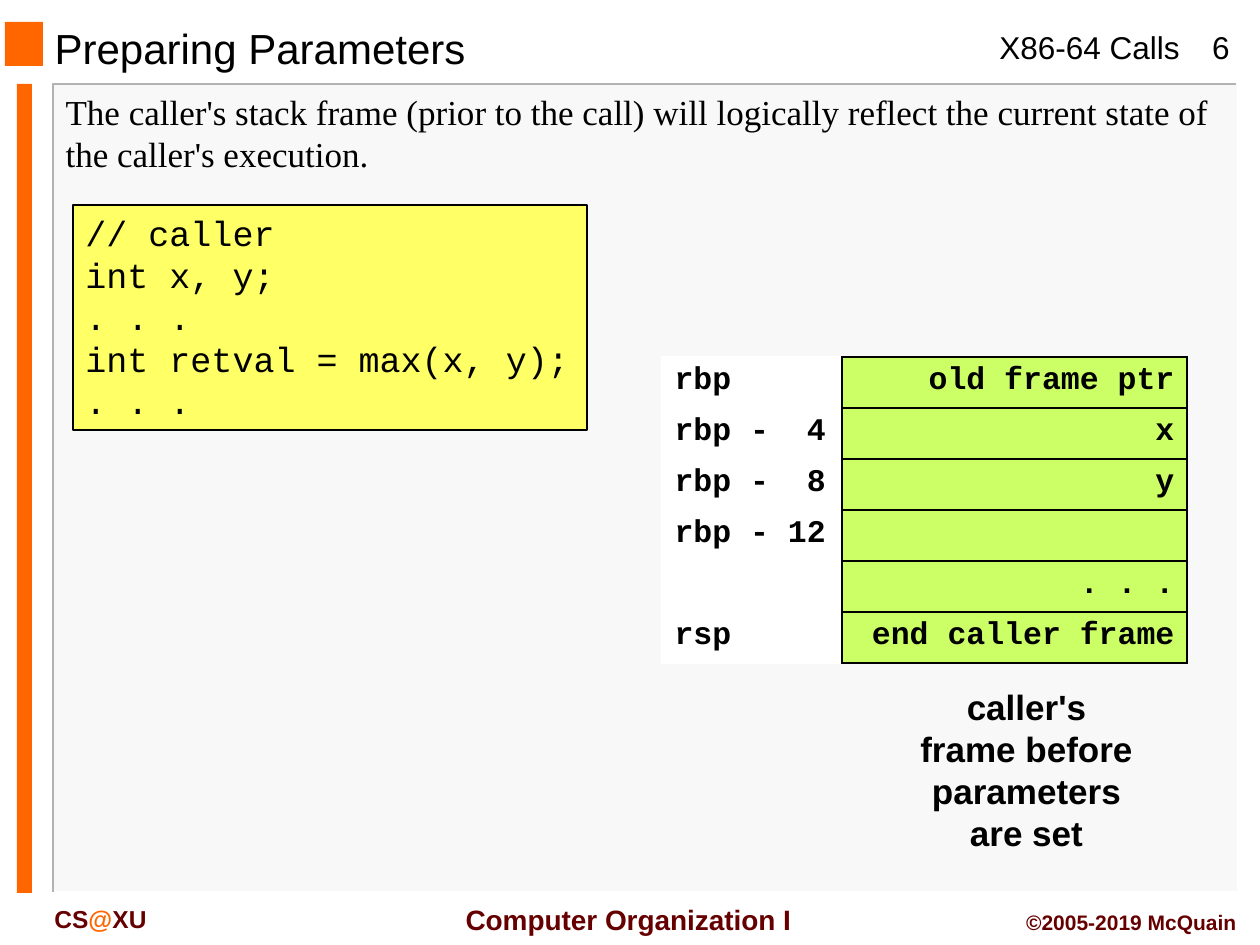
from dataclasses import dataclass
from typing import NamedTuple

from lxml.etree import SubElement
from pptx import Presentation
from pptx.dml.color import RGBColor as Rgb
from pptx.enum.text import MSO_ANCHOR as Anchor, MSO_AUTO_SIZE as AutoSize, PP_ALIGN as Align
from pptx.enum.shapes import MSO_SHAPE as Preset
from pptx.oxml.ns import qn
from pptx.util import Emu, Pt

EMU_PER_PX = 914400 / 126


@dataclass(frozen=True)
class Theme:
    ink: str = "000000"
    white: str = "FFFFFF"
    orange: str = "FF6600"
    maroon: str = "660000"
    panel: str = "F8F8F8"
    edge: str = "B2B2B2"
    code: str = "FFFF66"
    stack: str = "CCFF66"
    sans: str = "Arial"
    serif: str = "Times New Roman"
    mono: str = "Courier New"
    title: int = 24
    body: int = 20
    body_leading: int = 24
    label: int = 18
    course: int = 16
    school: int = 14
    credit: int = 12


THEME = Theme()


class Box(NamedTuple):
    left: int
    top: int
    width: int
    height: int


class Style(NamedTuple):
    size: int
    font: str = THEME.sans
    color: str = THEME.ink
    bold: bool = False
    align: Align = Align.LEFT
    leading: int | None = None


class Label(NamedTuple):
    text: str
    box: Box
    style: Style
    wrap: bool = True
    anchor: Anchor = Anchor.TOP


class Bar(NamedTuple):
    box: Box
    fill: str
    line: str | None = None


class Edge(NamedTuple):
    points: list[tuple[int, int]]
    color: str


class StackRow(NamedTuple):
    address: str
    content: str


BARS = [
    Bar(Box(54, 84, 1184, 808), THEME.panel),
    Bar(Box(5, 22, 38, 44), THEME.orange),
    Bar(Box(17, 84, 15, 809), THEME.orange),
]
EDGES = [
    Edge([(1236, 84), (53, 84), (53, 892)], THEME.edge),
    Edge([(1238, 84), (1238, 892), (55, 892)], THEME.white),
]
LABELS = [
    Label("X86-64 Calls", Box(987, 22, 208, 50), Style(THEME.label), wrap=False),
    Label("6", Box(1179, 22, 84, 50), Style(THEME.label, align=Align.CENTER)),
    Label("Computer Organization I", Box(445, 896, 367, 47),
          Style(THEME.course, color=THEME.maroon, bold=True, align=Align.CENTER),
          wrap=False, anchor=Anchor.MIDDLE),
    Label("©2005-2019 McQuain", Box(987, 903, 262, 38),
          Style(THEME.credit, color=THEME.maroon, bold=True, align=Align.RIGHT)),
    Label("caller's frame before parameters are set", Box(903, 679, 247, 183),
          Style(THEME.body, bold=True, align=Align.CENTER, leading=THEME.body_leading)),
]
SCHOOL_PARTS = [("CS", THEME.maroon), ("@", THEME.orange), ("XU", THEME.maroon)]
CALLER_CODE = "// caller\nint x, y;\n. . .\nint retval = max(x, y);\n. . ."
STACK_ROWS = [
    StackRow("rbp", "old frame ptr"),
    StackRow("rbp -  4", "x"),
    StackRow("rbp -  8", "y"),
    StackRow("rbp - 12", ""),
    StackRow("", ". . ."),
    StackRow("rsp", "end caller frame"),
]
STACK_COLUMNS = (180, 345)
STACK_ROW_HEIGHT = 51


def px(length: int) -> Emu:
    return Emu(round(length * EMU_PER_PX))


def place(shape, box: Box) -> None:
    shape.left, shape.top, shape.width, shape.height = map(px, box)


def format_text(frame, style: Style) -> None:
    for paragraph in frame.paragraphs:
        paragraph.alignment = style.align
        paragraph.space_before = Pt(0)
        if style.leading:
            paragraph.line_spacing = Pt(style.leading)
        for face in [paragraph.font, *(run.font for run in paragraph.runs)]:
            face.size, face.name, face.bold = Pt(style.size), style.font, style.bold
            face.color.rgb = Rgb.from_string(style.color)


def write(frame, text: str, style: Style, wrap: bool = True, anchor: Anchor = Anchor.TOP) -> None:
    frame.text = text
    frame.auto_size = AutoSize.NONE
    frame.word_wrap = wrap
    frame.vertical_anchor = anchor
    format_text(frame, style)


def draw_bar(slide, bar: Bar):
    rect = slide.shapes.add_shape(Preset.RECTANGLE, *map(px, bar.box))
    rect.shadow.inherit = False
    rect.fill.solid()
    rect.fill.fore_color.rgb = Rgb.from_string(bar.fill)
    if bar.line:
        rect.line.color.rgb = Rgb.from_string(bar.line)
        rect.line.width = Pt(0.75)
    else:
        rect.line.fill.background()
    return rect


def draw_edge(slide, edge: Edge) -> None:
    start, *rest = edge.points
    builder = slide.shapes.build_freeform(*start, scale=EMU_PER_PX)
    builder.add_line_segments(rest, close=False)
    outline = builder.convert_to_shape()
    outline.shadow.inherit = False
    outline.fill.background()
    outline.line.color.rgb = Rgb.from_string(edge.color)
    outline.line.width = Pt(1)


def draw_label(slide, label: Label):
    caption = slide.shapes.add_textbox(*map(px, label.box))
    write(caption.text_frame, label.text, label.style, label.wrap, label.anchor)
    return caption


def draw_school(slide) -> None:
    text = "".join(part for part, _ in SCHOOL_PARTS)
    style = Style(THEME.school, color=THEME.maroon, bold=True)
    school = draw_label(slide, Label("", Box(42, 898, 189, 42), style))
    paragraph = school.text_frame.paragraphs[0]
    for part, color in SCHOOL_PARTS:
        run = paragraph.add_run()
        run.text = part
    format_text(school.text_frame, style)
    for run, (_, color) in zip(paragraph.runs, SCHOOL_PARTS):
        run.font.color.rgb = Rgb.from_string(color)


def border_cell(cell, sides: str) -> None:
    properties = cell._tc.get_or_add_tcPr()
    for index, side in enumerate(sides):
        line = SubElement(properties, qn(f"a:ln{side}"), w=str(Pt(1)))
        SubElement(SubElement(line, qn("a:solidFill")), qn("a:srgbClr"), val=THEME.ink)
        properties.insert(index, line)


def draw_stack(slide, left: int, top: int) -> None:
    box = Box(left, top, sum(STACK_COLUMNS), STACK_ROW_HEIGHT * len(STACK_ROWS))
    stack = slide.shapes.add_table(len(STACK_ROWS), len(STACK_COLUMNS), *map(px, box)).table
    stack.first_row = stack.horz_banding = False
    for column, width in zip(stack.columns, STACK_COLUMNS):
        column.width = px(width)
    looks = [(THEME.white, Align.LEFT, "R"), (THEME.stack, Align.RIGHT, "LRTB")]
    for row, entry in zip(stack.rows, STACK_ROWS):
        row.height = px(STACK_ROW_HEIGHT)
        for cell, text, (fill, align, sides) in zip(row.cells, entry, looks):
            cell.text = text
            format_text(cell.text_frame, Style(THEME.label, THEME.mono, bold=True, align=align))
            cell.fill.solid()
            cell.fill.fore_color.rgb = Rgb.from_string(fill)
            border_cell(cell, sides)


def fill_placeholders(slide) -> None:
    title, body = slide.shapes.title, slide.placeholders[1]
    place(title, Box(42, 24, 798, 48))
    write(title.text_frame, "Preparing Parameters", Style(THEME.title), anchor=Anchor.MIDDLE)
    place(body, Box(53, 84, 1187, 97))
    write(body.text_frame,
          "The caller's stack frame (prior to the call) will logically reflect "
          "the current state of the caller's execution.",
          Style(THEME.body, THEME.serif, leading=THEME.body_leading))
    properties = body.text_frame.paragraphs[0]._p.get_or_add_pPr()
    properties.set("marL", "0")
    properties.set("indent", "0")
    bullet = SubElement(properties, qn("a:buNone"))
    properties.find(qn("a:defRPr")).addprevious(bullet)
    for holder in (title, body):
        slide.shapes._spTree.append(holder._element)


def main() -> None:
    deck = Presentation()
    deck.slide_width, deck.slide_height = px(1260), px(945)
    slide = deck.slides.add_slide(deck.slide_layouts[1])
    for bar in BARS:
        draw_bar(slide, bar)
    for edge in EDGES:
        draw_edge(slide, edge)
    fill_placeholders(slide)
    for label in LABELS:
        draw_label(slide, label)
    draw_school(slide)
    code = draw_bar(slide, Bar(Box(73, 205, 514, 225), THEME.code, THEME.ink))
    write(code.text_frame, CALLER_CODE,
          Style(THEME.body, THEME.mono, leading=THEME.body_leading))
    draw_stack(slide, 662, 357)
    deck.save("out.pptx")


if __name__ == "__main__":
    main()
